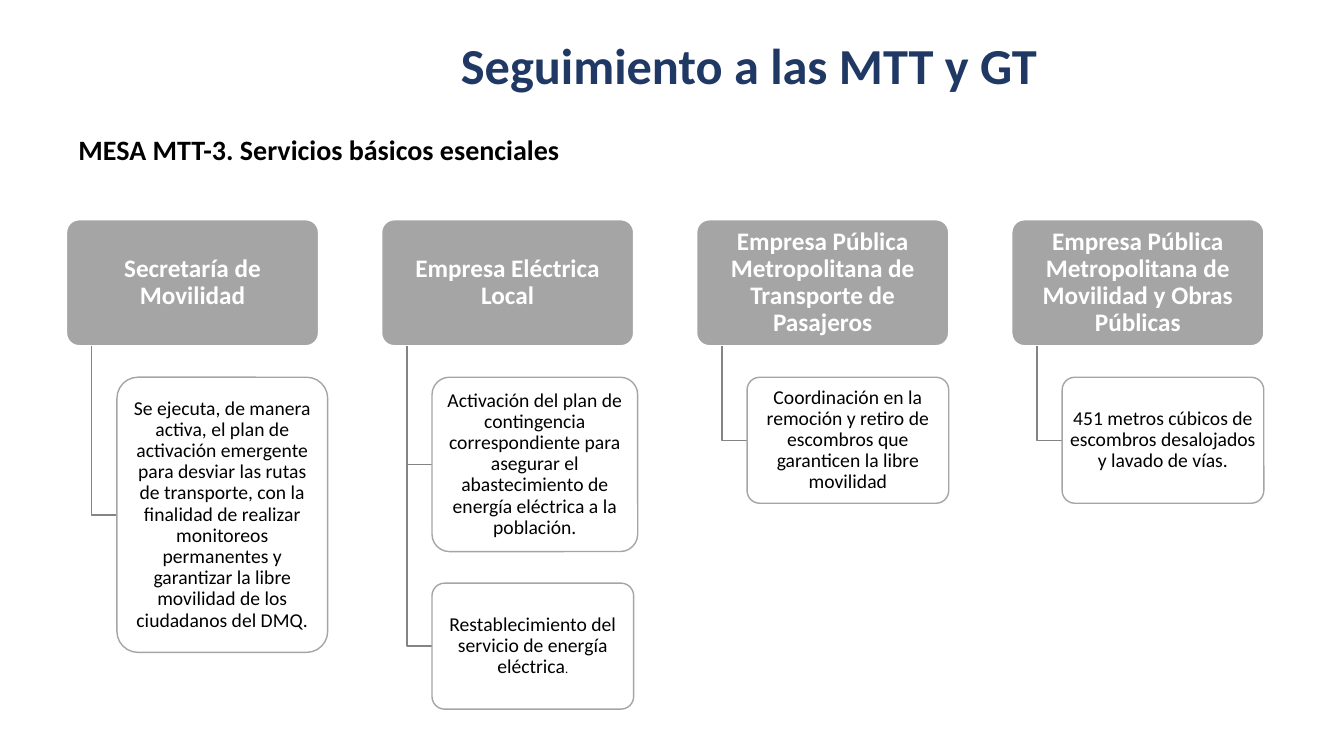
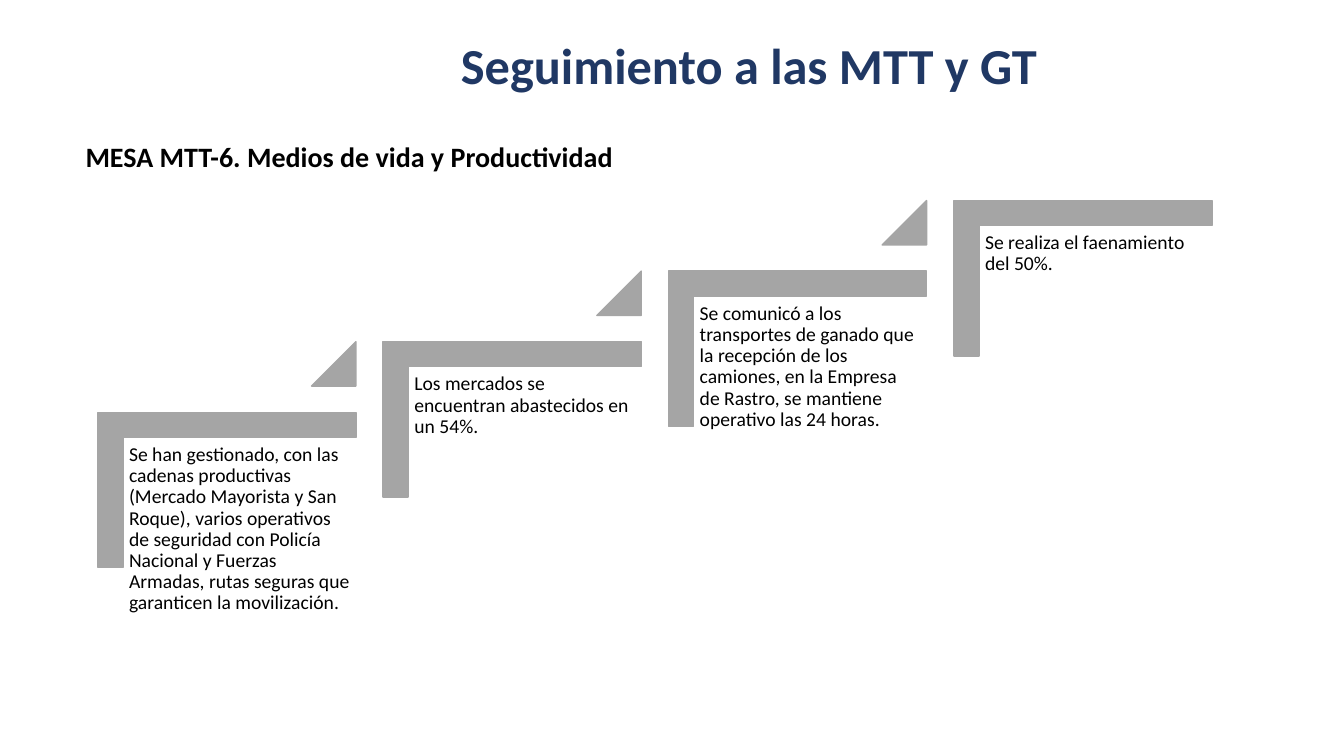
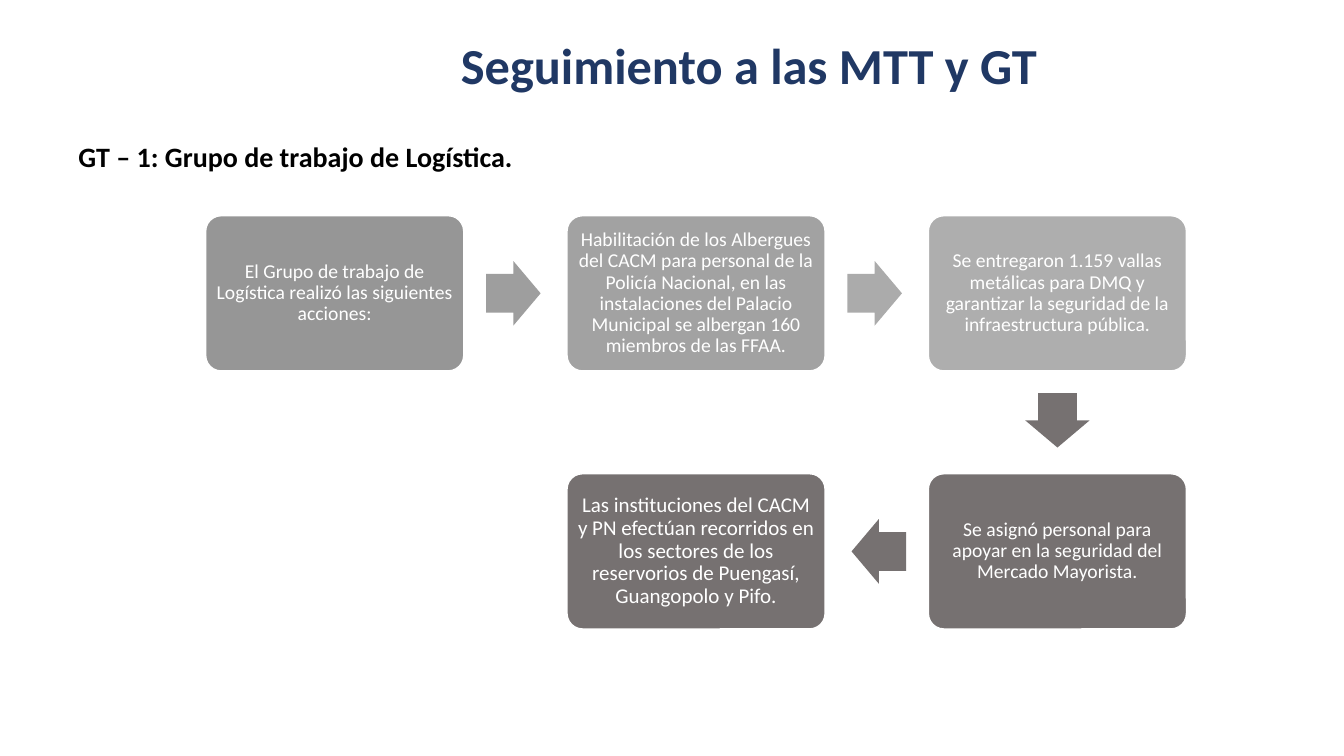
import math
from dataclasses import dataclass
from itertools import pairwise

from pptx import Presentation
from pptx import util as u
from pptx.dml.color import RGBColor
from pptx.enum import shapes, text

FONT = "Calibri"
NAVY, BLACK, WHITE = "203864", "000000", "FFFFFF"
GREY, LINK_GREY, DARK_GREY = "A5A5A5", "848484", "767171"
TITLE = "Seguimiento a las MTT y GT"
LEFT, CENTER = text.PP_ALIGN.LEFT, text.PP_ALIGN.CENTER
TOP, MIDDLE = text.MSO_ANCHOR.TOP, text.MSO_ANCHOR.MIDDLE
ROUNDED = shapes.MSO_SHAPE.ROUNDED_RECTANGLE


@dataclass(frozen=True)
class Box:
    left: float
    top: float
    width: float
    height: float

    @property
    def right(self) -> float:
        return self.left + self.width

    @property
    def bottom(self) -> float:
        return self.top + self.height

    @property
    def center(self) -> tuple[float, float]:
        return self.left + self.width / 2, self.top + self.height / 2

    def lengths(self) -> list[int]:
        return [u.Inches(v) for v in (self.left, self.top, self.width, self.height)]


def centered(x: float, y: float, width: float, height: float) -> Box:
    return Box(x - width / 2, y - height / 2, width, height)


@dataclass(frozen=True)
class Piece:
    """A run of text in one format."""
    words: str
    size: float = 14
    color: str = BLACK
    bold: bool = False


@dataclass(frozen=True)
class Action:
    width: float
    height: float
    pieces: tuple[Piece, ...]


@dataclass(frozen=True)
class Institution:
    name: str
    actions: tuple[Action, ...]


@dataclass(frozen=True)
class FlowStep:
    column: int
    row: int
    fill: str
    arrow_fill: str
    words: str
    size: float = 14


def rgb(color: str) -> RGBColor:
    return RGBColor.from_string(color)


def write(frame, pieces, align=LEFT, anchor=TOP, inset=(0.1, 0.05), spacing=0.9) -> None:
    frame.word_wrap = True
    frame.auto_size = text.MSO_AUTO_SIZE.NONE
    frame.vertical_anchor = anchor
    frame.margin_left = frame.margin_right = u.Inches(inset[0])
    frame.margin_top = frame.margin_bottom = u.Inches(inset[1])
    paragraph = frame.paragraphs[0]
    paragraph.alignment = align
    paragraph.line_spacing = spacing
    for piece in pieces:
        run = paragraph.add_run()
        run.text = piece.words
        run.font.name = FONT
        run.font.size = u.Pt(piece.size)
        run.font.bold = piece.bold
        run.font.color.rgb = rgb(piece.color)


def add_text(slide, box: Box, pieces, **layout) -> None:
    write(slide.shapes.add_textbox(*box.lengths()).text_frame, pieces, **layout)


def outline(shape, color: str | None) -> None:
    shape.shadow.inherit = False
    if color:
        shape.line.color.rgb = rgb(color)
        shape.line.width = u.Pt(1)
    else:
        shape.line.fill.background()


def add_figure(slide, kind, box: Box, fill: str, line: str | None = None,
               adjustments=(), rotation: float = 0):
    figure = slide.shapes.add_shape(kind, *box.lengths())
    figure.fill.solid()
    figure.fill.fore_color.rgb = rgb(fill)
    outline(figure, line)
    for index, value in enumerate(adjustments):
        figure.adjustments[index] = value
    figure.rotation = rotation
    return figure


def add_card(slide, box: Box, fill: str, line: str, pieces, inset) -> None:
    card = add_figure(slide, ROUNDED, box, fill, line, (0.1,))
    write(card.text_frame, pieces, CENTER, MIDDLE, inset)


def add_slide(deck, heading: str, left: float, top: float):
    slide = deck.slides.add_slide(deck.slide_layouts.get_by_name("Title Only"))
    write(slide.shapes.title.text_frame, [Piece(TITLE, 36, NAVY, True)], CENTER, spacing=1.0)
    add_text(slide, Box(left, top, 9, 0.68), [Piece(heading, 20, BLACK, True)], spacing=2.0)
    return slide


def add_elbow(slide, x: float, top: float, end_x: float, end_y: float) -> None:
    builder = slide.shapes.build_freeform(u.Inches(x), u.Inches(top))
    corners = [(u.Inches(x), u.Inches(end_y)), (u.Inches(end_x), u.Inches(end_y))]
    builder.add_line_segments(corners, close=False)
    elbow = builder.convert_to_shape()
    elbow.fill.background()
    outline(elbow, LINK_GREY)


def add_institutions(slide, institutions) -> None:
    """Each header has its actions hanging below; gaps are a quarter of a header."""
    width, height = 2.5, 1.25
    for column, institution in enumerate(institutions):
        header = Box(0.66 + column * width * 1.25, 2.18, width, height)
        add_card(slide, header, GREY, WHITE,
                 [Piece(institution.name, 18, WHITE, True)], (0.04, 0.03))
        trunk = header.left + width / 10
        top = header.bottom + height / 4
        for action in institution.actions:
            box = Box(header.left + width / 5, top, action.width, action.height)
            add_elbow(slide, trunk, header.bottom, box.left, box.center[1])
            add_card(slide, box, WHITE, GREY, action.pieces, (0.03, 0.02))
            top = box.bottom + height / 4


def add_staircase(slide, steps) -> None:
    width, height, rise = 2.56, 1.54, 0.7
    for index, words in enumerate(steps):
        stair = Box(0.97 + index * 2.83, 4.09 - index * rise, width, height)
        add_figure(slide, shapes.MSO_SHAPE.CORNER, centered(*stair.center, height, width),
                   GREY, GREY, (0.161, 0.161), 90)
        add_text(slide, Box(stair.left + 0.25, stair.top + 0.26, 2.31, 2.02),
                 [Piece(words)], inset=(0.06, 0.06))
        if index < len(steps) - 1:
            marker = Box(stair.right - 0.44, stair.top - rise, 0.44, 0.44)
            add_figure(slide, shapes.MSO_SHAPE.ISOSCELES_TRIANGLE, marker, GREY, GREY, (1.0,))


def flow_box(step: FlowStep) -> Box:
    width, height = 2.56, 1.54
    return Box(2.04 + step.column * width * 1.4, 2.14 + step.row * width, width, height)


def add_flow(slide, steps) -> None:
    for step in steps:
        add_card(slide, flow_box(step), step.fill, WHITE,
                 [Piece(step.words, step.size, WHITE)], (0.06, 0.06))
    for step, following in pairwise(steps):
        x, y = flow_box(step).center
        next_x, next_y = flow_box(following).center
        angle = math.atan2(next_y - y, next_x - x)
        setback = 0.02
        arrow = centered((x + next_x) / 2 - setback * math.cos(angle),
                         (y + next_y) / 2 - setback * math.sin(angle), 0.54, 0.64)
        add_figure(slide, shapes.MSO_SHAPE.RIGHT_ARROW, arrow, step.arrow_fill,
                   adjustments=(0.6, 0.5), rotation=math.degrees(angle))


INSTITUTIONS = (
    Institution("Secretaría de Movilidad", (
        Action(2.09, 2.73, (Piece(
            "Se ejecuta, de manera activa, el plan de activación emergente para desviar "
            "las rutas de transporte, con la finalidad de realizar monitoreos permanentes "
            "y garantizar la libre movilidad de los ciudadanos del DMQ."),)),
    )),
    Institution("Empresa Eléctrica Local", (
        Action(2.04, 1.73, (Piece(
            "Activación del plan de contingencia correspondiente para asegurar el "
            "abastecimiento de energía eléctrica a la población."),)),
        Action(2, 1.25, (Piece("Restablecimiento del servicio de energía eléctrica"),
                         Piece(".", 9))),
    )),
    Institution("Empresa Pública Metropolitana de Transporte de Pasajeros", (
        Action(2, 1.25, (Piece(
            "Coordinación en la remoción y retiro de escombros que garanticen "
            "la libre movilidad"),)),
    )),
    Institution("Empresa Pública Metropolitana de Movilidad y Obras Públicas", (
        Action(2, 1.25, (Piece(
            "451 metros cúbicos de escombros desalojados y lavado de vías."),)),
    )),
)

LIVELIHOOD_STEPS = (
    "Se han gestionado, con las cadenas productivas (Mercado Mayorista y San Roque), "
    "varios operativos de seguridad con Policía Nacional y Fuerzas Armadas, rutas "
    "seguras que garanticen la movilización.",
    "Los mercados se encuentran abastecidos en un 54%.",
    "Se comunicó a los transportes de ganado que la recepción de los camiones, en la "
    "Empresa de Rastro, se mantiene operativo las 24 horas.",
    "Se realiza el faenamiento del 50%.",
)

LOGISTICS_STEPS = (
    FlowStep(0, 0, "969696", "9E9E9E",
             "El Grupo de trabajo de Logística realizó las siguientes acciones:"),
    FlowStep(1, 0, "A2A2A2", "ABABAB",
             "Habilitación de los Albergues del CACM para personal de la Policía Nacional, "
             "en las instalaciones del Palacio Municipal se albergan 160 miembros de las FFAA."),
    FlowStep(2, 0, "AEAEAE", DARK_GREY,
             "Se entregaron 1.159 vallas metálicas para DMQ y garantizar la seguridad "
             "de la infraestructura pública."),
    FlowStep(2, 1, DARK_GREY, DARK_GREY,
             "Se asignó personal para apoyar en la seguridad del Mercado Mayorista."),
    FlowStep(1, 1, DARK_GREY, DARK_GREY,
             "Las instituciones del CACM y PN efectúan recorridos en los sectores de los "
             "reservorios de Puengasí, Guangopolo y Pifo.", 15),
)


def main() -> None:
    deck = Presentation()
    deck.slide_width, deck.slide_height = u.Inches(13.33), u.Inches(7.5)
    title = deck.slide_layouts.get_by_name("Title Only").placeholders[0]
    title.left, title.top, title.width, title.height = Box(1.53, 0.29, 11.8, 0.71).lengths()

    add_institutions(add_slide(deck, "MESA MTT-3. Servicios básicos esenciales", 0.68, 0.93),
                     INSTITUTIONS)
    add_staircase(add_slide(deck, "MESA MTT-6. Medios de vida y Productividad", 0.75, 1),
                  LIVELIHOOD_STEPS)
    add_flow(add_slide(deck, "GT – 1: Grupo de trabajo de Logística.", 0.68, 1),
             LOGISTICS_STEPS)
    deck.save("out.pptx")


if __name__ == "__main__":
    main()
